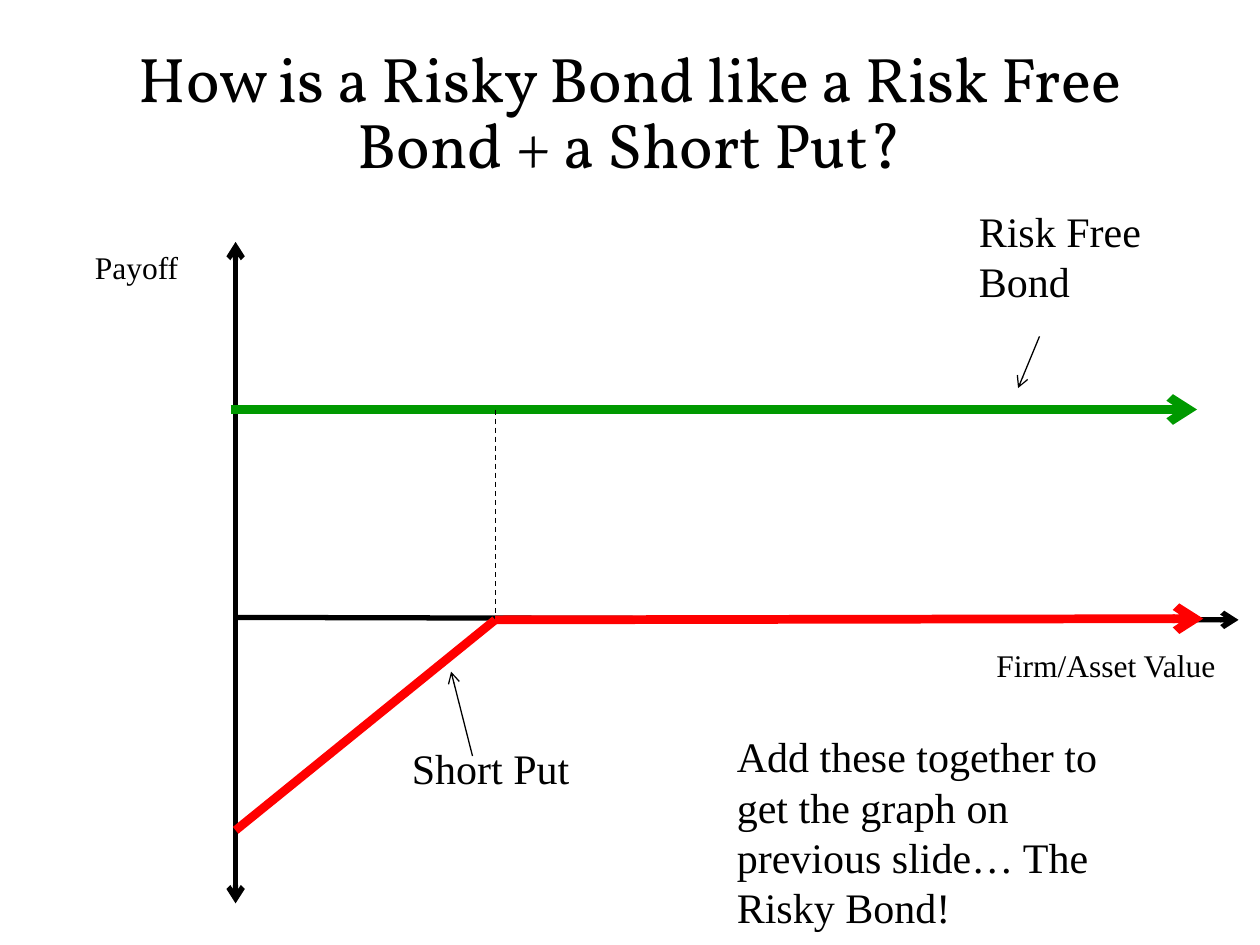
"""Build the slide comparing a risky bond with a risk free bond plus a short put."""
import pptx
import pptx.dml.color
import pptx.enum.dml
import pptx.enum.shapes
import pptx.enum.text
import pptx.oxml
import pptx.oxml.ns
import pptx.util

Inches = pptx.util.Inches
Pt = pptx.util.Pt
ALIGN = pptx.enum.text.PP_ALIGN
BLACK = pptx.dml.color.RGBColor(0x00, 0x00, 0x00)
RED = pptx.dml.color.RGBColor(0xFF, 0x00, 0x00)
GREEN = pptx.dml.color.RGBColor(0x00, 0x99, 0x00)

TITLE = "How is a Risky Bond like a Risk Free Bond + a Short Put?"
AXIS_X, AXIS_Y, STRIKE_X, BOND_Y = 1.87, 4.92, 3.93, 3.25

LINES = [
    ((AXIS_X, 7.17), (AXIS_X, 1.92), BLACK, 3, ("headEnd", "tailEnd"), False),
    ((AXIS_X, 4.9), (9.83, AXIS_Y), BLACK, 3, ("tailEnd",), False),
    ((AXIS_X, 6.59), (STRIKE_X, AXIS_Y), RED, 5, (), False),
    ((1.83, BOND_Y), (9.5, BOND_Y), GREEN, 5, ("tailEnd",), False),
    ((STRIKE_X, BOND_Y), (STRIKE_X, AXIS_Y), BLACK, 0.75, (), True),
    ((STRIKE_X, AXIS_Y), (9.55, 4.91), RED, 5, ("tailEnd",), False),
    ((8.25, 2.67), (8.08, 3.08), BLACK, 0.75, ("tailEnd",), False),
    ((3.75, 6), (3.58, 5.33), BLACK, 0.75, ("tailEnd",), False),
]

LABELS = [
    ("Firm/Asset Value", (7.81, 5.08, 2.19, 0.28), 18, ALIGN.LEFT),
    ("Payoff ", (0.42, 1.92, 1.39, 0.4), 18, ALIGN.CENTER),
    ("Risk Free Bond", (7.67, 1.58, 1.58, 0.91), 24, ALIGN.LEFT),
    ("Short Put", (3.17, 5.84, 1.58, 0.5), 24, ALIGN.LEFT),
    ("Add these together to get the graph on previous slide… The Risky Bond!",
     (5.75, 5.75, 3.33, 1.72), 24, ALIGN.LEFT),
]


def add_line(slide, start, end, color, width, arrowheads, dashed):
    connector = slide.shapes.add_connector(
        pptx.enum.shapes.MSO_CONNECTOR.STRAIGHT,
        *(Inches(value) for value in start + end))
    connector.line.color.rgb = color
    connector.line.width = Pt(width)
    if dashed:
        connector.line.dash_style = pptx.enum.dml.MSO_LINE.DASH
    outline = connector.line._get_or_add_ln()
    for arrowhead in arrowheads:
        pptx.oxml.ns.qn("a:" + arrowhead)
        outline.append(pptx.oxml.parse_xml(
            f'<a:{arrowhead} {pptx.oxml.ns.nsdecls("a")} type="arrow"/>'))
    connector._element.spPr.append(pptx.oxml.parse_xml(
        f'<a:effectLst {pptx.oxml.ns.nsdecls("a")}/>'))


def set_text(shape, text, font_name, size, alignment):
    shape.text_frame.text = text
    shape.text_frame.word_wrap = True
    paragraph = shape.text_frame.paragraphs[0]
    paragraph.alignment = alignment
    font = paragraph.runs[0].font
    font.name = font_name
    font.size = Pt(size)
    font.color.rgb = BLACK


def add_title(slide):
    title = slide.shapes.title
    title.left, title.top = Inches(0.75), Inches(0.42)
    title.width, title.height = Inches(8.5), Inches(1)
    set_text(title, TITLE, "Vollkorn", 36, ALIGN.CENTER)
    title.text_frame.auto_size = pptx.enum.text.MSO_AUTO_SIZE.NONE
    title.text_frame.vertical_anchor = pptx.enum.text.MSO_ANCHOR.MIDDLE
    title.text_frame.paragraphs[0].line_spacing = 0.87


def main():
    presentation = pptx.Presentation()
    presentation.slide_width, presentation.slide_height = Inches(10), Inches(7.5)
    slide = presentation.slides.add_slide(presentation.slide_layouts[5])
    add_title(slide)
    for line in LINES:
        add_line(slide, *line)
    for text, box, size, alignment in LABELS:
        label = slide.shapes.add_textbox(*(Inches(value) for value in box))
        set_text(label, text, "Times New Roman", size, alignment)
        label.text_frame.auto_size = pptx.enum.text.MSO_AUTO_SIZE.SHAPE_TO_FIT_TEXT
    presentation.save("out.pptx")


if __name__ == "__main__":
    main()
